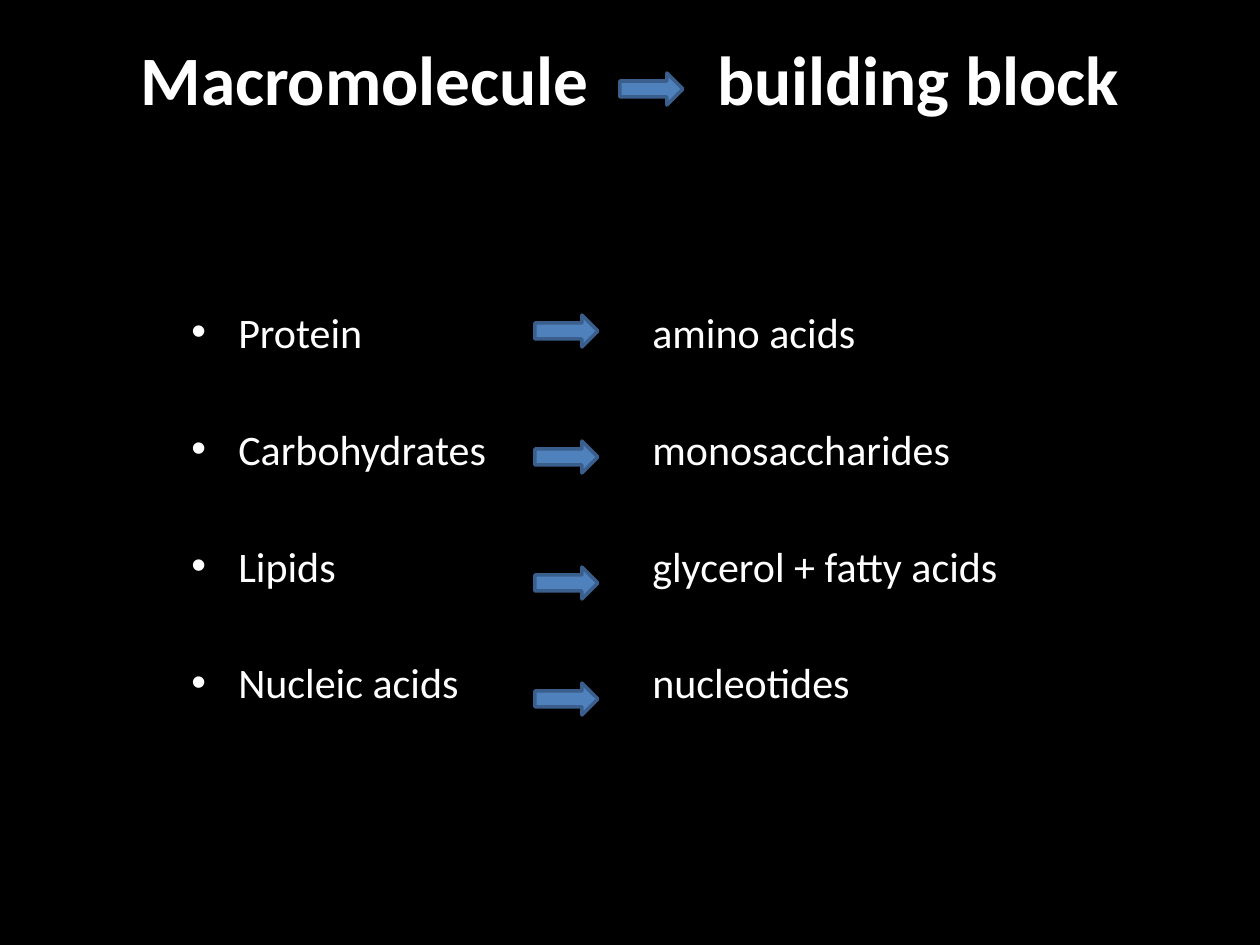
"""Build a slide that pairs each macromolecule with its building block."""
import pptx
import pptx.util
import pptx.dml.color
import pptx.enum.shapes
import pptx.enum.text
from lxml import etree

RGB = pptx.dml.color.RGBColor
BLACK = RGB(0x00, 0x00, 0x00)
WHITE = RGB(0xFF, 0xFF, 0xFF)
BLUE = RGB(0x4F, 0x81, 0xBD)
NAVY = RGB(0x3A, 0x5F, 0x8C)
FONT = "Calibri"
PAIRS = [
    ("Protein", "amino acids"),
    ("Carbohydrates", "monosaccharides"),
    ("Lipids", "glycerol + fatty acids"),
    ("Nucleic acids", "nucleotides"),
]


def px(num):
    return pptx.util.Emu(round(num * 914400 / 126))


def style(run, size, bold):
    run.font.name = FONT
    run.font.size = pptx.util.Pt(size)
    run.font.bold = bold
    run.font.color.rgb = WHITE


deck = pptx.Presentation()
deck.slide_width, deck.slide_height = px(1260), px(945)
slide = deck.slides.add_slide(deck.slide_layouts[5])
slide.background.fill.solid()
slide.background.fill.fore_color.rgb = BLACK

title = slide.shapes.title
title.left, title.top, title.width, title.height = px(63), px(36), px(1134), px(157)
frame = title.text_frame
frame.auto_size = pptx.enum.text.MSO_AUTO_SIZE.NONE
frame.vertical_anchor = pptx.enum.text.MSO_ANCHOR.TOP
frame.margin_top = 0
head = frame.paragraphs[0]
head.alignment = pptx.enum.text.PP_ALIGN.CENTER
for word in ("Macromolecule", " ", "building block"):
    run = head.add_run()
    run.text = word
    style(run, 39.6, True)
gap = head.runs[1]
gap.font._element.set("spc", "6450")

columns = [(179, 441, True), (640, 557, False)]
for texts, (left, width, dots) in zip(zip(*PAIRS), columns):
    box = slide.shapes.add_textbox(px(left), px(300), px(width), px(544))
    frame = box.text_frame
    frame.word_wrap = True
    frame.text = "\n".join(texts)
    for row, para in enumerate(frame.paragraphs):
        para.space_before = pptx.util.Pt(38 if row else 0)
        style(para.runs[0], 24, False)
        if dots:
            props = para._p.get_or_add_pPr()
            props.set("marL", str(px(47)))
            props.set("indent", str(-px(47)))
            color = etree.SubElement(props, pptx.oxml.ns.qn("a:buClr"))
            etree.SubElement(color, pptx.oxml.ns.qn("a:srgbClr"), val=str(WHITE))
            etree.SubElement(props, pptx.oxml.ns.qn("a:buFont"), typeface="Arial")
            etree.SubElement(props, pptx.oxml.ns.qn("a:buChar"), char="•")

for left, top in [(620, 73), (535, 315), (535, 441), (535, 567), (535, 683)]:
    arrow = slide.shapes.add_shape(
        pptx.enum.shapes.MSO_SHAPE.RIGHT_ARROW, px(left), px(top), px(63), px(32)
    )
    arrow.shadow.inherit = False
    arrow.fill.solid()
    arrow.fill.fore_color.rgb = BLUE
    arrow.line.color.rgb = NAVY
    arrow.line.width = pptx.util.Pt(2)

deck.save("out.pptx")
